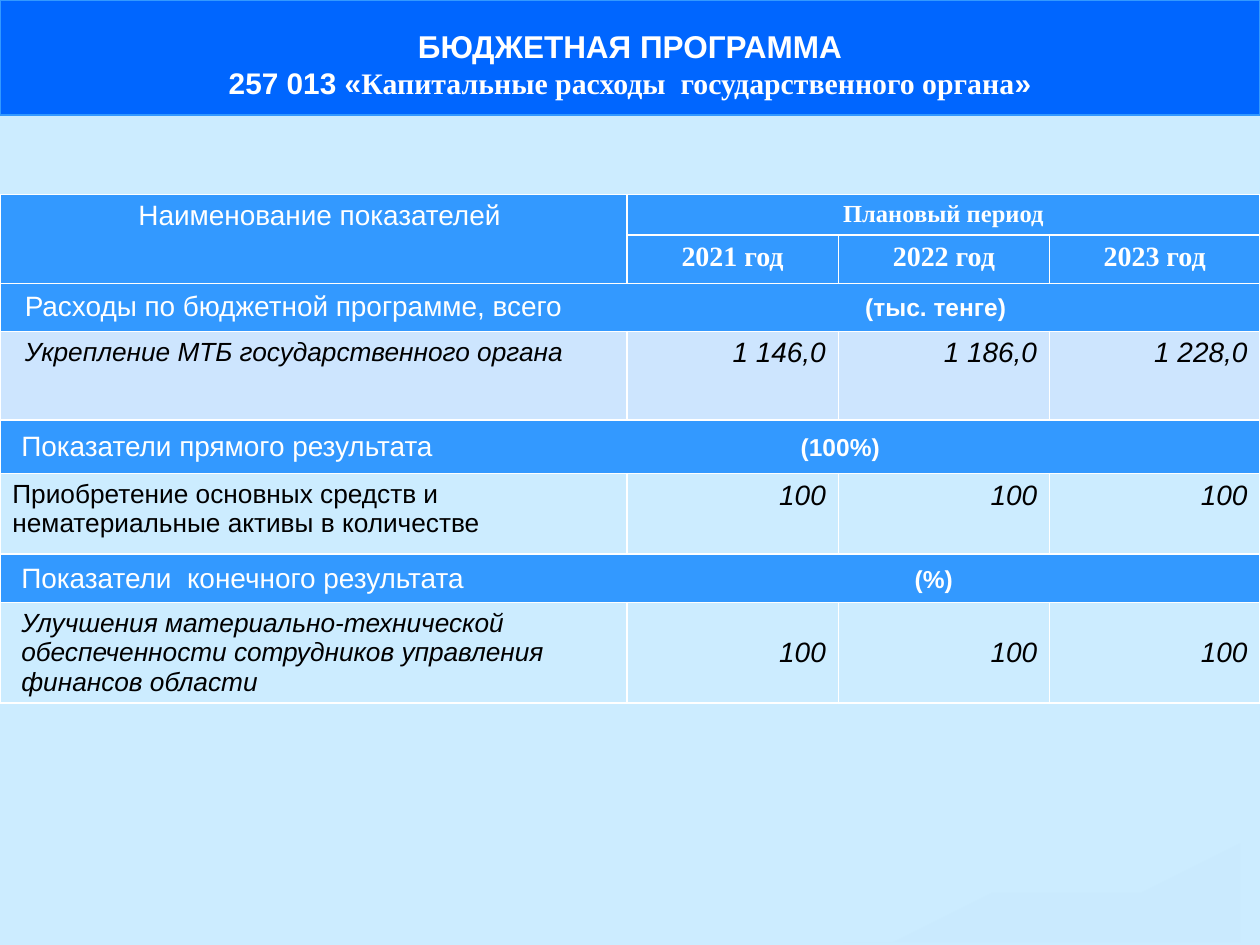
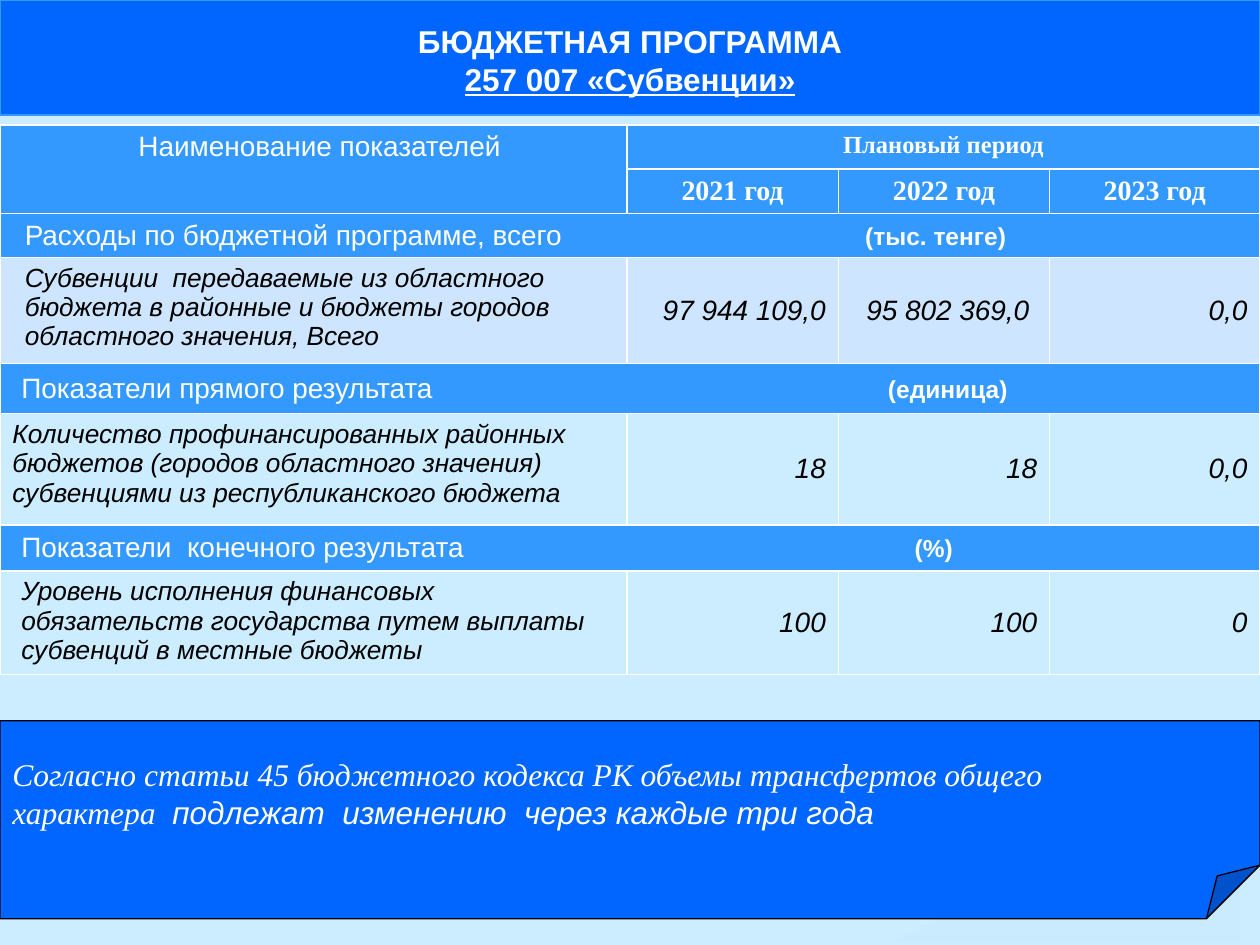
from lxml.etree import SubElement
from pptx import Presentation
from pptx.dml.color import RGBColor
from pptx.enum.shapes import MSO_SHAPE as SHAPE
from pptx.enum.text import MSO_ANCHOR as ANCHOR, MSO_AUTO_SIZE as AUTO, PP_ALIGN as ALIGN
from pptx.oxml.ns import qn
from pptx.util import Cm, Pt

COLORS = {
    "background": "CCECFF",
    "banner": "0066FF",
    "header": "3399FF",
    "spending": "CDE5FE",
    "wave": "C6E7FC",
    "light": "FFFFFF",
    "dark": "000000",
}
SANS, SERIF = "Arial", "Times New Roman"
WIDTH, HEIGHT = 25.4, 19.05
COLUMNS = (12.64, 4.26, 4.26, 4.24)
YEARS = ("2021 год", "2022 год", "2023 год")
SECTIONS = (
    "Расходы по бюджетной программе, всего",
    "Показатели прямого результата",
    "Показатели  конечного результата",
)
SECTION_INDENTS = (0.5, 0.43, 0.43)
LABEL_INDENTS = (0.5, 0.25, 0.43)
WAVE = (
    (25.4, 17.17), (24.71, 17.3), (23.24, 17.6), (21.77, 17.97), (19.74, 18.42),
    (17.96, 18.75), (17.4, 18.85), (18.52, 18.98), (19.05, 19.05), (23, 19.05),
    (24, 18.85), (24.71, 18.64), (25.4, 18.39),
)


def rgb(name):
    return RGBColor.from_string(COLORS[name])


def add_run(p, text, size, color="light", font=SANS, bold=False, italic=False, underline=None):
    r = p.add_run()
    r.text = text
    f = r.font
    f.name, f.size, f.bold, f.italic, f.underline = font, Pt(size), bold, italic, underline
    f.color.rgb = rgb(color)


def style_shape(sp, fill, line):
    sp.fill.solid()
    sp.fill.fore_color.rgb = rgb(fill)
    sp.line.color.rgb = rgb(line)
    sp.line.width = Pt(0.75)


def add_banner(slide, program, top_margin):
    """Fill the title band; program is a list of (text, run style) pairs."""
    sp = slide.shapes.title
    sp.left, sp.top, sp.width, sp.height = Cm(0), Cm(0), Cm(WIDTH), Cm(2.32)
    style_shape(sp, "banner", "header")
    tf = sp.text_frame
    tf.auto_size, tf.word_wrap, tf.vertical_anchor = AUTO.NONE, True, ANCHOR.MIDDLE
    tf.margin_top, tf.margin_bottom = Cm(top_margin), Cm(0.13)
    heading, name = tf.paragraphs[0], tf.add_paragraph()
    heading.alignment = name.alignment = ALIGN.CENTER
    add_run(heading, "БЮДЖЕТНАЯ ПРОГРАММА", 18, bold=True)
    for text, style in program:
        add_run(name, text, bold=True, **style)


def add_wave(slide):
    builder = slide.shapes.build_freeform(*WAVE[0], scale=Cm(1))
    builder.add_line_segments(WAVE[1:], close=True)
    sp = builder.convert_to_shape()
    sp.shadow.inherit = False
    sp.line.fill.background()
    sp.fill.solid()
    sp.fill.fore_color.rgb = rgb("wave")
    color = sp._element.spPr.find(".//" + qn("a:srgbClr"))
    SubElement(color, qn("a:alpha"), val="30000")


def add_borders(cell):
    tcPr = cell._tc.get_or_add_tcPr()
    for side in ("lnL", "lnR", "lnT", "lnB"):
        ln = SubElement(tcPr, qn("a:" + side), w=str(Pt(1)))
        fill = SubElement(ln, qn("a:solidFill"))
        SubElement(fill, qn("a:srgbClr"), val=COLORS["light"])


def fill_cell(cell, text, size, align=ALIGN.LEFT, indent=0.25, anchor=ANCHOR.TOP, **style):
    cell.margin_left, cell.vertical_anchor = Cm(indent), anchor
    p = cell.text_frame.paragraphs[0]
    p.alignment = align
    add_run(p, text, size, **style)
    return p


def fill_header(table):
    table.cell(0, 0).merge(table.cell(1, 0))
    table.cell(0, 1).merge(table.cell(0, 3))
    fill_cell(table.cell(0, 0), "Наименование показателей", 16, ALIGN.CENTER, 0.5)
    fill_cell(table.cell(0, 1), "Плановый период", 14, ALIGN.CENTER, font=SERIF, bold=True)
    for col, year in enumerate(YEARS, 1):
        fill_cell(table.cell(1, col), year, 16, ALIGN.CENTER, font=SERIF, bold=True)


def fill_section(table, row, name, indent, unit, unit_left):
    """Write a full-width heading with its unit at a tab stop."""
    cell = table.cell(row, 0)
    cell.merge(table.cell(row, 3))
    p = fill_cell(cell, name + "\t", 16, indent=indent, anchor=ANCHOR.MIDDLE)
    add_run(p, unit, 14, bold=True)
    tabs = SubElement(p._p.get_or_add_pPr(), qn("a:tabLst"))
    SubElement(tabs, qn("a:tab"), pos=str(Cm(unit_left - indent)), algn="l")


def add_indicators(slide, top, heights, groups):
    """Add the table; each group is (unit, unit left, label, label italic, values, anchor)."""
    table = slide.shapes.add_table(
        len(heights), len(COLUMNS), Cm(0), Cm(top), Cm(WIDTH), Cm(sum(heights))).table
    for column, width in zip(table.columns, COLUMNS):
        column.width = Cm(width)
    for i, height in enumerate(heights):
        table.rows[i].height = Cm(height)
        fill = {3: "spending", 5: None, 7: None}.get(i, "header")
        for col in range(len(COLUMNS)):
            cell = table.cell(i, col)
            add_borders(cell)
            if fill:
                cell.fill.solid()
                cell.fill.fore_color.rgb = rgb(fill)
            else:
                cell.fill.background()
    fill_header(table)
    for i, (unit, unit_left, label, italic, values, anchor) in enumerate(groups):
        row = 2 + 2 * i
        fill_section(table, row, SECTIONS[i], SECTION_INDENTS[i], unit, unit_left)
        fill_cell(table.cell(row + 1, 0), label, 15, indent=LABEL_INDENTS[i],
                  color="dark", italic=italic)
        for col, value in enumerate(values, 1):
            fill_cell(table.cell(row + 1, col), value, 16, ALIGN.RIGHT, anchor=anchor,
                      color="dark", italic=True)


def add_note(slide, left, top, width, height):
    sp = slide.shapes.add_shape(
        SHAPE.FOLDED_CORNER, Cm(left), Cm(top), Cm(width), Cm(height))
    geometry = sp._element.spPr.find(qn("a:prstGeom"))
    guides = geometry.find(qn("a:avLst"))
    if guides is None:
        guides = SubElement(geometry, qn("a:avLst"))
    if len(guides) == 0:
        SubElement(guides, qn("a:gd"), name="adj")
    guides[0].set("fmla", "val 27000")
    sp.shadow.inherit = False
    style_shape(sp, "banner", "dark")
    tf = sp.text_frame
    tf.word_wrap, tf.vertical_anchor = True, ANCHOR.MIDDLE
    first, second = tf.paragraphs[0], tf.add_paragraph()
    first.alignment = second.alignment = ALIGN.LEFT
    add_run(first, "Согласно статьи 45 бюджетного кодекса РК объемы трансфертов общего",
            18, font=SERIF, italic=True)
    add_run(second, "характера ", 18, font=SERIF, italic=True)
    add_run(second, " подлежат  изменению  через каждые три года", 18, italic=True)


def add_program_slide(prs, program, top_margin, top, heights, groups):
    slide = prs.slides.add_slide(prs.slide_layouts[5])
    add_banner(slide, program, top_margin)
    add_indicators(slide, top, heights, groups)
    add_wave(slide)
    return slide


def main():
    prs = Presentation()
    prs.slide_width, prs.slide_height = Cm(WIDTH), Cm(HEIGHT)
    background = prs.slide_master.background.fill
    background.solid()
    background.fore_color.rgb = rgb("background")

    add_program_slide(
        prs,
        [("257 013 «", {"size": 17}),
         ("Капитальные расходы  государственного органа", {"size": 17, "font": SERIF}),
         ("»", {"size": 17})],
        0.38, 3.92, (0.82, 0.97, 0.97, 1.79, 1.08, 1.62, 0.98, 2.02),
        [("(тыс. тенге)", 17.44, "Укрепление МТБ государственного органа", True,
          ("1 146,0", "1 186,0", "1 228,0"), ANCHOR.TOP),
         ("(100%)", 16.14,
          "Приобретение основных средств и нематериальные активы в количестве", False,
          ("100",) * 3, ANCHOR.TOP),
         ("(%)", 18.44, "Улучшения материально-технической обеспеченности "
          "сотрудников управления финансов области", True,
          ("100",) * 3, ANCHOR.MIDDLE)])

    subventions = add_program_slide(
        prs, [("257 007 «Субвенции»", {"size": 18, "underline": True})],
        0.23, 2.52, (0.89, 0.89, 0.89, 2.14, 1.01, 2.24, 0.93, 2.09),
        [("(тыс. тенге)", 17.44, "Субвенции  передаваемые из областного бюджета в районные "
          "и бюджеты городов областного значения, Всего", True,
          ("97 944 109,0", "95 802 369,0 ", "0,0"), ANCHOR.MIDDLE),
         ("(единица)", 17.9, "Количество профинансированных районных бюджетов (городов "
          "областного значения)  субвенциями из республиканского бюджета", True,
          ("18", "18", "0,0"), ANCHOR.MIDDLE),
         ("(%)", 18.44, "Уровень исполнения финансовых обязательств государства "
          "путем выплаты субвенций в местные бюджеты", True,
          ("100", "100", "0"), ANCHOR.MIDDLE)])
    add_note(subventions, 0, 14.53, WIDTH, 3.99)

    prs.save("out.pptx")


if __name__ == "__main__":
    main()
